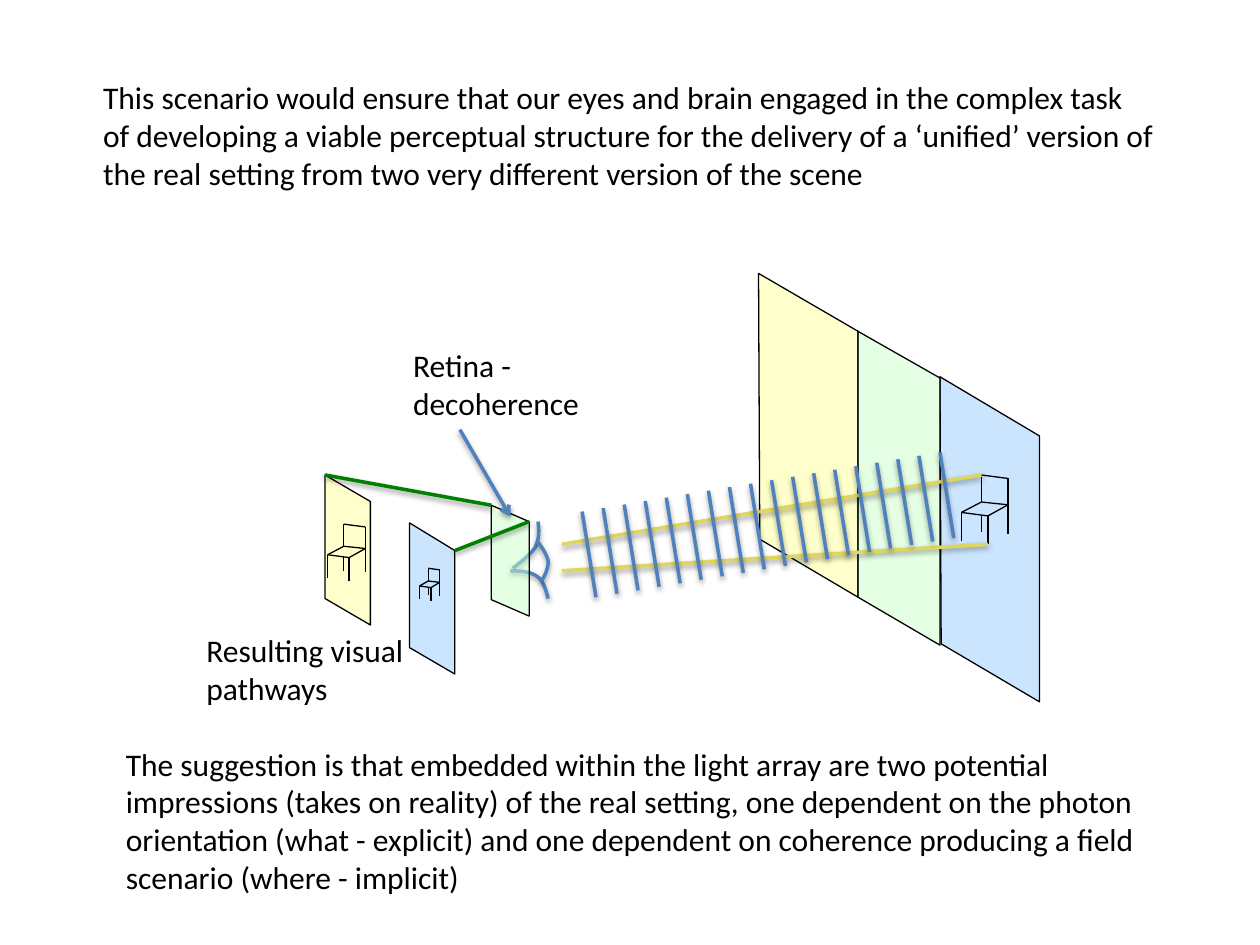
from lxml.etree import SubElement
from pptx import Presentation
from pptx.dml.color import RGBColor
from pptx.enum.shapes import MSO_CONNECTOR
from pptx.oxml.ns import qn
from pptx.util import Inches, Pt

BLACK = RGBColor(0x00, 0x00, 0x00)
YELLOW = RGBColor(0xFF, 0xFF, 0x99)
BLUE = RGBColor(0x99, 0xCC, 0xFF)
MINT = RGBColor(0xCC, 0xFF, 0xCC)
WAVE = RGBColor(0x4F, 0x81, 0xBD)
RAY = RGBColor(0xDF, 0xD6, 0x60)
PATHWAY = RGBColor(0x00, 0x80, 0x00)

TEXTS = [
    ("This scenario would ensure that our eyes and brain engaged in the complex task of developing "
     "a viable perceptual structure for the delivery of a ‘unified’ version of the real setting "
     "from two very different version of the scene", (0.72, 0.57, 8.54, 1.01)),
    ("The suggestion is that embedded within the light array are two potential impressions (takes "
     "on reality) of the real setting, one dependent on the photon orientation (what - explicit) "
     "and one dependent on coherence producing a field scenario (where - implicit)",
     (0.9, 5.86, 8.55, 1.31)),
    ("Retina - decoherence", (3.18, 2.7, 1.75, 0.71)),
    ("Resulting visual pathways", (1.54, 4.96, 2.53, 0.71)),
]

SCENE_PANELS = [
    (YELLOW, [(6.03, 4.28), (6.02, 2.17), (6.81, 2.63), (6.81, 4.74)]),
    (BLUE, [(7.47, 5.11), (7.46, 2.99), (8.25, 3.46), (8.25, 5.57)]),
    (MINT, [(6.81, 4.74), (6.81, 2.63), (7.46, 3), (7.46, 5.12)]),
]
VISUAL_PANELS = [
    (YELLOW, [(2.58, 4.75), (2.58, 3.77), (2.94, 3.98), (2.94, 4.96)]),
    (BLUE, [(3.25, 5.14), (3.25, 4.15), (3.61, 4.37), (3.61, 5.35)]),
]
RETINA = (MINT, [(3.9, 4.76), (3.9, 4.01), (4.2, 4.14), (4.2, 4.89)])

CHAIR = [
    ((0.43, 0), (1, 0.05)), ((0.43, 0), (0.43, 0.39)), ((1, 0.05), (1, 0.43)),
    ((0.43, 0.39), (1, 0.43)), ((1, 0.43), (0.57, 0.59)), ((0.43, 0.39), (0, 0.54)),
    ((0, 0.54), (0.57, 0.59)), ((0, 0.54), (0, 0.95)), ((0.57, 0.59), (0.57, 1)),
    ((1, 0.43), (1, 0.85)), ((0.43, 0.58), (0.43, 0.82)),
]
SCENE_CHAIR = (7.63, 3.77, 0.37, 0.55)
VISUAL_CHAIRS = [(3.33, 4.51, 0.16, 0.26), (2.6, 4.16, 0.3, 0.45)]

EYE_CURVES = [
    [(4.27, 4.14), (4.28, 4.21), (4.28, 4.28), (4.25, 4.34), (4.22, 4.4), (4.07, 4.51), (4.07, 4.51)],
    [(4.05, 4.53), (4.14, 4.53), (4.22, 4.54), (4.27, 4.58), (4.32, 4.61), (4.35, 4.75), (4.35, 4.75)],
    [(4.26, 4.29), (4.3, 4.34), (4.34, 4.4), (4.35, 4.45), (4.36, 4.51), (4.3, 4.61), (4.3, 4.61)],
]
RAYS = [((7.79, 3.77), (4.46, 4.32)), ((7.84, 4.32), (4.46, 4.53))]
PATHWAYS = [((4.2, 4.14), (3.61, 4.37)), ((3.9, 4.01), (2.58, 3.77))]
RETINA_ARROW = ((3.65, 3.41), (4.05, 4.1))

WAVE_COUNT = 18
FIRST_WAVE, LAST_WAVE = (4.62, 4.06), (7.46, 3.59)
WAVE_SPAN = (0.11, 0.68)
CURVE_STEPS = 12


def set_effect(shape, shadow):
    effects = SubElement(shape._element.spPr, qn("a:effectLst"))
    if shadow:
        outer = SubElement(effects, qn("a:outerShdw"), blurRad=str(Pt(3.1)), dist=str(Pt(1.6)),
                           dir="5400000", rotWithShape="0")
        color = SubElement(outer, qn("a:srgbClr"), val="000000")
        SubElement(color, qn("a:alpha"), val="38000")


def set_line(shape, color, width):
    shape.line.color.rgb = color
    shape.line.width = Pt(width)


def add_text(slide, text, box, size=18, font="Calibri", color=BLACK):
    shape = slide.shapes.add_textbox(*map(Inches, box))
    shape.text_frame.word_wrap = True
    run = shape.text_frame.paragraphs[0].add_run()
    run.text = text
    run.font.size, run.font.name = Pt(size), font
    run.font.color.rgb = color


def add_line(slide, start, end, color=BLACK, width=2, shadow=True, arrow=False):
    line = slide.shapes.add_connector(MSO_CONNECTOR.STRAIGHT, *map(Inches, (*start, *end)))
    set_line(line, color, width)
    if arrow:
        SubElement(line.line._get_or_add_ln(), qn("a:tailEnd"), type="arrow")
    set_effect(line, shadow)


def add_outline(slide, points, close):
    points = [(Inches(x), Inches(y)) for x, y in points]
    builder = slide.shapes.build_freeform(*points[0], scale=1.0)
    builder.add_line_segments(points[1:], close=close)
    return builder.convert_to_shape()


def add_panel(slide, color, corners):
    panel = add_outline(slide, corners, True)
    panel.fill.solid()
    panel.fill.fore_color.rgb = color
    fill_color = panel._element.spPr.find(qn("a:solidFill"))[0]
    SubElement(fill_color, qn("a:alpha"), val="50000")
    set_line(panel, BLACK, 0.75)
    set_effect(panel, False)


def bezier(controls, t):
    weights = ((1 - t) ** 3, 3 * t * (1 - t) ** 2, 3 * t * t * (1 - t), t ** 3)
    return tuple(sum(w * point[axis] for w, point in zip(weights, controls)) for axis in (0, 1))


def add_curve(slide, controls):
    points = [controls[0]]
    for first in range(0, len(controls) - 1, 3):
        points += [bezier(controls[first:first + 4], step / CURVE_STEPS)
                   for step in range(1, CURVE_STEPS + 1)]
    curve = add_outline(slide, points, False)
    curve.fill.background()
    set_line(curve, WAVE, 2)
    set_effect(curve, True)


def add_chair(slide, left, top, width, height):
    for ends in CHAIR:
        start, end = [(left + x * width, top + y * height) for x, y in ends]
        add_line(slide, start, end, width=0.75, shadow=False)


def add_waves(slide):
    for index in range(WAVE_COUNT):
        share = index / (WAVE_COUNT - 1)
        start = [a + (b - a) * share for a, b in zip(FIRST_WAVE, LAST_WAVE)]
        end = [a + span for a, span in zip(start, WAVE_SPAN)]
        add_line(slide, start, end, color=WAVE)


def main():
    presentation = Presentation()
    presentation.slide_width, presentation.slide_height = Inches(10), Inches(7.5)
    slide = presentation.slides.add_slide(presentation.slide_layouts[6])

    for panel in SCENE_PANELS:
        add_panel(slide, *panel)
    add_chair(slide, *SCENE_CHAIR)
    for controls in EYE_CURVES:
        add_curve(slide, controls)
    for ray in RAYS:
        add_line(slide, *ray, color=RAY)
    add_waves(slide)
    for panel in VISUAL_PANELS:
        add_panel(slide, *panel)
    for chair in VISUAL_CHAIRS:
        add_chair(slide, *chair)
    add_panel(slide, *RETINA)
    add_line(slide, *RETINA_ARROW, color=WAVE, arrow=True)
    for pathway in PATHWAYS:
        add_line(slide, *pathway, color=PATHWAY)
    for text, box in TEXTS:
        add_text(slide, text, box)

    presentation.save("out.pptx")


if __name__ == "__main__":
    main()
